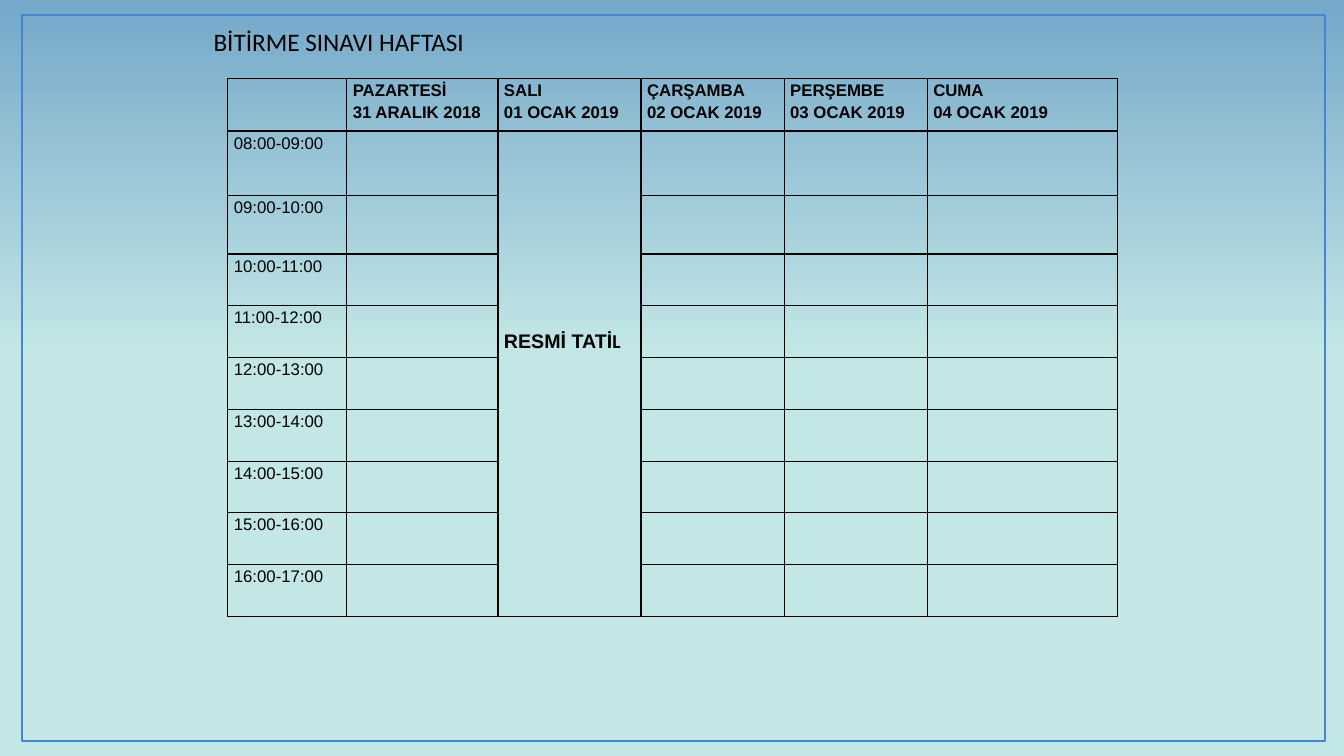
from dataclasses import dataclass

from lxml.etree import SubElement
from pptx import Presentation
from pptx.dml.color import RGBColor
from pptx.enum.shapes import MSO_SHAPE
from pptx.oxml.ns import qn
from pptx.util import Inches, Pt


@dataclass(frozen=True)
class Theme:
    sky: str = "75A8C9"
    mist: str = "C3E7E6"
    frame: str = "4584D3"
    ink: str = "000000"
    body_font: str = "Arial"
    title_font: str = "Calibri"
    title_size: int = 18
    holiday_size: int = 14
    cell_size: int = 12


THEME = Theme()
UNIT = Inches(1 / 12)  # the slide is a grid of 160 columns by 90 rows


def grid(*counts):
    return [round(n * UNIT) for n in counts]


def write(p, text, *, size, font=THEME.body_font, bold=False, color=THEME.ink):
    r = p.add_run()
    r.text = text
    r.font.size, r.font.name, r.font.bold = Pt(size), font, bold
    r.font.color.rgb = RGBColor.from_string(color)


class Deck:
    def __init__(self, theme):
        self.theme = theme
        self.prs = Presentation()
        self.prs.slide_width, self.prs.slide_height = grid(160, 90)
        self.s = self.prs.slides.add_slide(self.prs.slide_layouts[6])

    def background(self):
        fill = self.s.background.fill
        fill.gradient()
        fill.gradient_angle = 90
        stops = ((0.53, self.theme.mist), (1, self.theme.sky))
        for stop, (position, color) in zip(fill.gradient_stops, stops):
            stop.position = position
            stop.color.rgb = RGBColor.from_string(color)

    def frame(self, *box):
        sp = self.s.shapes.add_shape(MSO_SHAPE.RECTANGLE, *grid(*box))
        sp.shadow.inherit = False
        sp.fill.background()
        sp.line.color.rgb = RGBColor.from_string(self.theme.frame)
        sp.line.width = Pt(1.5)

    def title(self, text, *box):
        tf = self.s.shapes.add_textbox(*grid(*box)).text_frame
        tf.word_wrap = False
        write(tf.paragraphs[0], text, size=self.theme.title_size,
              font=self.theme.title_font)

    def table(self, left, top, widths, heights):
        box = grid(left, top, sum(widths), sum(heights))
        table = self.s.shapes.add_table(len(heights), len(widths), *box).table
        for col, width in zip(table.columns, grid(*widths)):
            col.width = width
        for row, height in zip(table.rows, grid(*heights)):
            row.height = height
        for cell in table.iter_cells():
            self.border(cell)
            cell.fill.background()
            cell.margin_left = cell.margin_right = Inches(0.06)
            cell.margin_top = cell.margin_bottom = 0
        return table

    def border(self, cell):
        tcPr = cell._tc.get_or_add_tcPr()
        for side in ("a:lnL", "a:lnR", "a:lnT", "a:lnB"):
            ln = SubElement(tcPr, qn(side), w=str(Pt(1)))
            SubElement(SubElement(ln, qn("a:solidFill")), qn("a:srgbClr"),
                       val=self.theme.ink)

    def cell(self, cell, *lines, bold=False):
        tf = cell.text_frame
        for i, line in enumerate(lines):
            p = tf.add_paragraph() if i else tf.paragraphs[0]
            p.line_spacing = 1.15
            write(p, line, size=self.theme.cell_size, bold=bold)


def main():
    deck = Deck(THEME)

    # Backdrop and heading
    deck.background()
    deck.frame(2.64, 1.8, 155.16, 86.4)
    deck.title("BİTİRME SINAVI HAFTASI", 24.24, 2.52, 33.12, 4.8)

    # Timetable
    table = deck.table(27.12, 9.36, [14.16, 18, 17.04, 17.04, 17.04, 22.68],
                       [6.24, 7.68, 6.96] + [6.17] * 7)
    days = [("PAZARTESİ", "31 ARALIK 2018"), ("SALI", "01 OCAK 2019"),
            ("ÇARŞAMBA", "02 OCAK 2019"), ("PERŞEMBE", "03 OCAK 2019"),
            ("CUMA", "04 OCAK 2019")]
    for col, day in enumerate(days, 1):
        deck.cell(table.cell(0, col), *day, bold=True)
    for row, hour in enumerate(range(8, 17), 1):
        deck.cell(table.cell(row, 0), f"{hour:02}:00-{hour + 1:02}:00")

    # Public holiday across the whole of Tuesday
    holiday = table.cell(1, 2)
    holiday.merge(table.cell(9, 2))
    holiday.margin_top = Inches(1.97)
    p = holiday.text_frame.paragraphs[0]
    for text, font in (("RESMİ TATİ", THEME.body_font), ("L", THEME.title_font)):
        write(p, text, size=THEME.holiday_size, font=font, bold=True)

    deck.prs.save("out.pptx")


if __name__ == "__main__":
    main()
